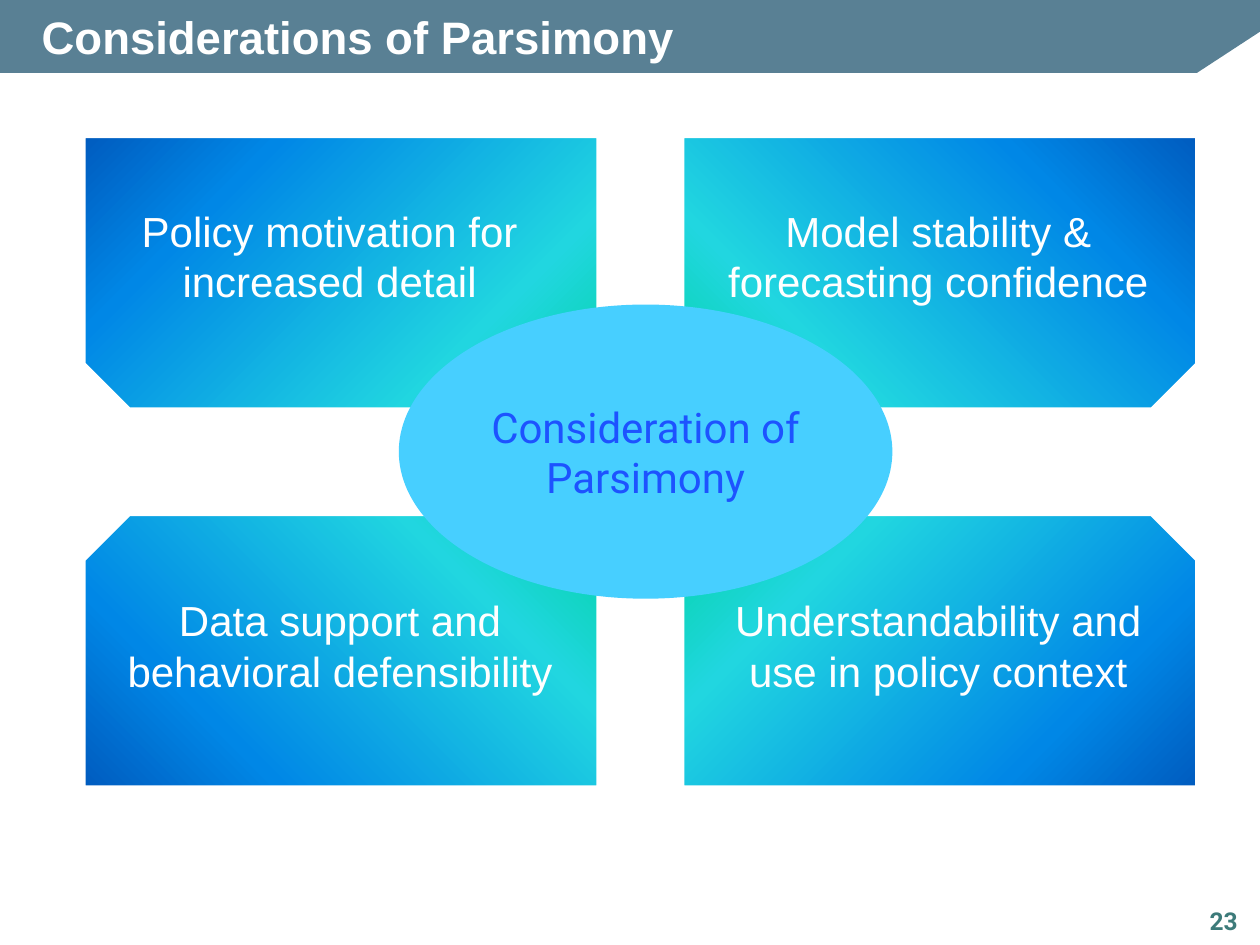
from copy import deepcopy

from pptx import Presentation
from pptx.dml.color import RGBColor
from pptx.enum.shapes import MSO_SHAPE as Shape
from pptx.enum.text import MSO_ANCHOR as Anchor, PP_ALIGN as Align
from pptx.oxml.ns import qn
from pptx.util import Cm, Pt

HUES = {"bar": "598094", "white": "FFFFFF", "page": "3D7B7A",
        "oval": "47CFFF", "core": "1D53FF"}
STOPS = [(0, "03D4A8"), (0.25, "21D6E0"), (0.75, "0087E6"), (1, "005CBF")]

TITLE = "Considerations of Parsimony"
CORE = "Consideration of Parsimony"
PAGE = "23"
# text, column, row, left edge of the text
CARDS = [
    ("Understandability and use in policy context", 1, 1, 14.18),
    ("Data support and behavioral defensibility", 0, 1, 2.12),
    ("Model stability & forecasting confidence", 1, 0, 14.18),
    ("Policy motivation for increased detail", 0, 0, 1.91),
]
LEFT, TOP = 1.69, 2.75
WIDE, HIGH = 10.37, 5.5
STEP_X, STEP_Y = 12.07, 7.62
TEXT_TOP, TEXT_STEP = 4.02, 7.85


def rgb(name):
    return RGBColor.from_string(HUES[name])


def write(shape, text, size, font, hue, align=Align.CENTER, bold=False,
          anchor=Anchor.TOP):
    frame = shape.text_frame
    frame.word_wrap = True
    frame.vertical_anchor = anchor
    para = frame.paragraphs[0]
    para.text = text
    para.alignment = align
    para.font.size = Pt(size)
    para.font.name = font
    para.font.bold = bold
    para.font.color.rgb = rgb(hue)
    return frame


def label(slide, box, *args, **kwargs):
    shape = slide.shapes.add_textbox(*map(Cm, box))
    return write(shape, *args, **kwargs)


def paint(shape, hue):
    shape.shadow.inherit = False
    shape.fill.solid()
    shape.fill.fore_color.rgb = rgb(hue)
    shape.line.fill.background()


def blend(shape, angle):
    """Fill with the four-stop gradient; angle runs anticlockwise."""
    fill = shape.fill
    fill.gradient()
    fill.gradient_angle = angle
    stops = next(shape.element.iter(qn("a:gsLst")))
    for stop in list(stops):
        stops.append(deepcopy(stop))
    for stop, (place, hue) in zip(fill.gradient_stops, STOPS):
        stop.position = place
        stop.color.rgb = RGBColor.from_string(hue)


def add_bar(slide):
    pen = slide.shapes.build_freeform(0, Cm(1.47))
    edge = [(24.13, 1.47), (25.4, 0.64), (25.4, 0), (0, 0)]
    pen.add_line_segments([(Cm(x), Cm(y)) for x, y in edge])
    paint(pen.convert_to_shape(), "bar")


def add_card(slide, col, row):
    card = slide.shapes.add_shape(
        Shape.SNIP_2_SAME_RECTANGLE, Cm(LEFT + col * STEP_X),
        Cm(TOP + row * STEP_Y), Cm(WIDE), Cm(HIGH))
    card.shadow.inherit = False
    card.rotation = 0 if row else 180
    blend(card, 315 if col == row else 225)
    card.line.color.rgb = rgb("white")
    card.line.width = Pt(2)


def main():
    deck = Presentation()
    deck.slide_width, deck.slide_height = Cm(25.4), Cm(19.05)
    slide = deck.slides.add_slide(deck.slide_layouts[6])

    add_bar(slide)
    label(slide, (23.5, 18.14, 1.7, 0.84), PAGE, 14, "Roboto", "page",
          Align.RIGHT, True)
    head = label(slide, (0.84, 0, 23.29, 1.47), TITLE, 26, "Arial", "white",
                 Align.LEFT, True, Anchor.MIDDLE)
    head.margin_left = 0

    for _, col, row, _ in CARDS:
        add_card(slide, col, row)
    for text, _, row, left in CARDS:
        label(slide, (left, TEXT_TOP + row * TEXT_STEP, 9.47, 2.31), text,
              24, "Arial", "white")

    oval = slide.shapes.add_shape(Shape.OVAL, Cm(8.04), Cm(6.14), Cm(9.95),
                                  Cm(5.93))
    paint(oval, "oval")
    write(oval, CORE, 24, "Roboto", "core", anchor=Anchor.MIDDLE)

    deck.save("out.pptx")


if __name__ == "__main__":
    main()
